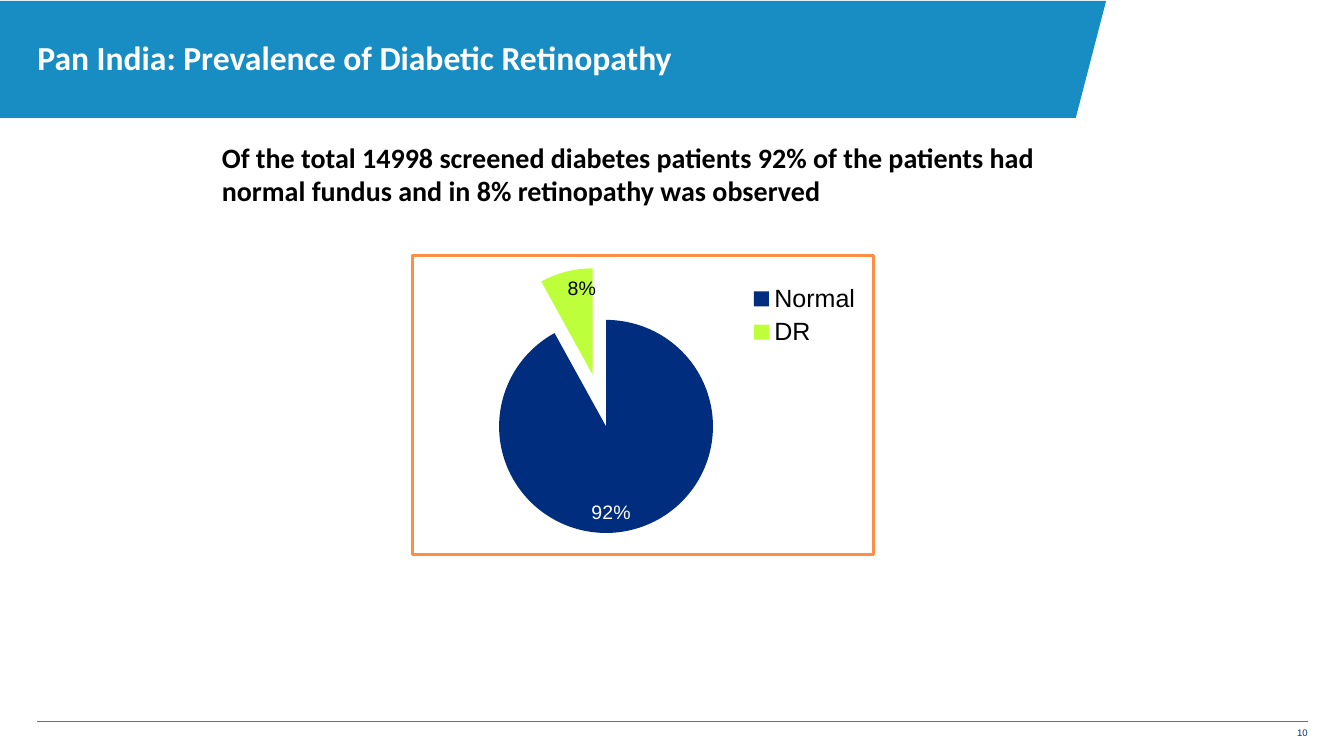
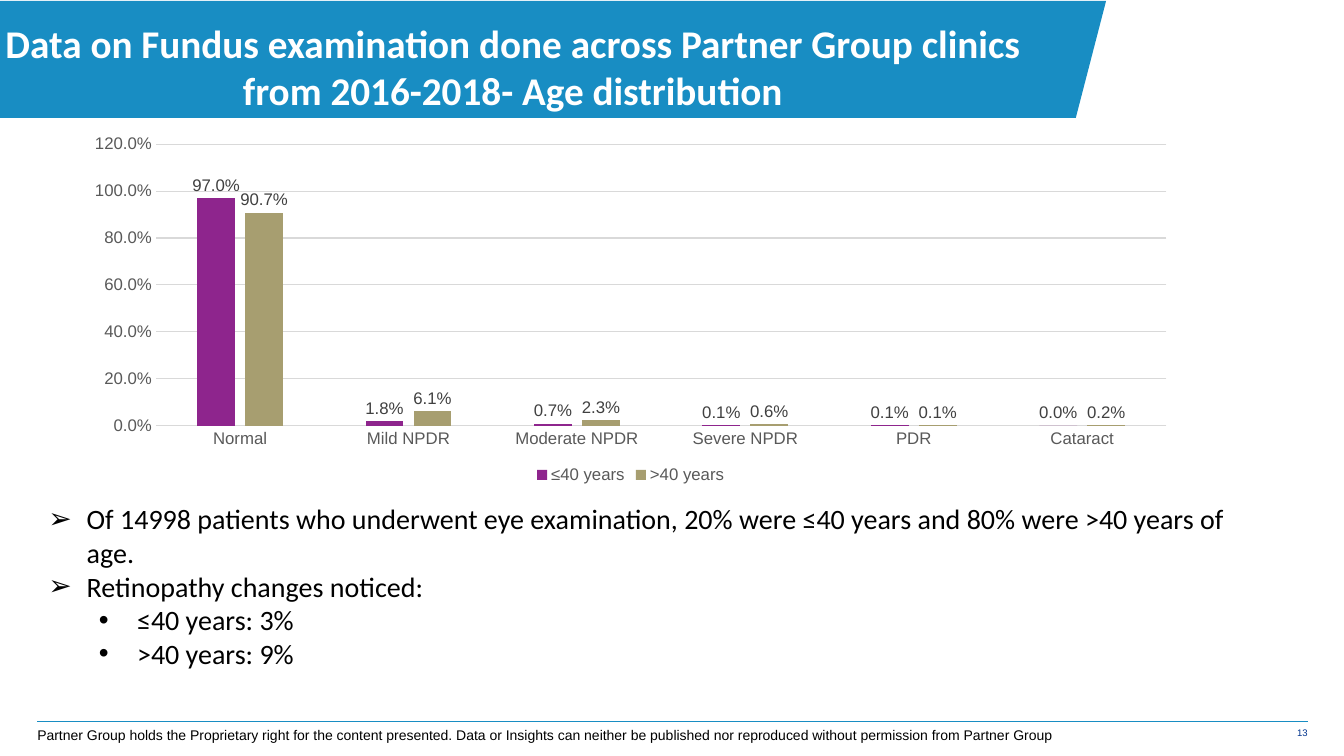
from dataclasses import dataclass
from typing import Optional

from lxml import etree
from pptx import Presentation
from pptx.chart.data import CategoryChartData
from pptx.dml.color import RGBColor
from pptx.enum.chart import XL_CHART_TYPE as CT, XL_LABEL_POSITION as LABEL
from pptx.enum.chart import XL_LEGEND_POSITION as LEGEND, XL_TICK_MARK as TICK
from pptx.enum.text import MSO_ANCHOR as ANCHOR, PP_ALIGN as ALIGN
from pptx.oxml import parse_xml
from pptx.oxml.ns import nsdecls, qn
from pptx.util import Inches, Pt

# Shared style
BLUE = RGBColor(0x18, 0x8D, 0xC3)
NAVY = RGBColor(0x00, 0x2D, 0x7D)
PAGE_BLUE = RGBColor(0x00, 0x33, 0x8D)
LIME = RGBColor(0xBD, 0xFF, 0x3B)
ORANGE = RGBColor(0xFF, 0x8E, 0x45)
PURPLE = RGBColor(0x8E, 0x25, 0x8D)
OLIVE = RGBColor(0xA7, 0x9E, 0x70)
GRID = RGBColor(0xD9, 0xD9, 0xD9)
GREY = RGBColor(0x59, 0x59, 0x59)
DARK = RGBColor(0x40, 0x40, 0x40)
BLACK = RGBColor(0, 0, 0)
WHITE = RGBColor(0xFF, 0xFF, 0xFF)
HEAD, BODY = "Calibri", "Arial"


@dataclass
class Box:
    left: float
    top: float
    width: float
    height: float

    def emu(self) -> tuple:
        return tuple(Inches(v) for v in (self.left, self.top, self.width, self.height))


@dataclass
class Item:
    text: str
    bullet: Optional[str] = None
    level: int = 0


@dataclass
class Series:
    name: str
    values: tuple
    color: RGBColor


# Helpers
def set_font(font, size: float, color: RGBColor, name: str = BODY, bold: bool = False) -> None:
    font.size, font.name, font.bold = Pt(size), name, bold
    font.color.rgb = color


def add_bullet(p, item: Item) -> None:
    pPr = p._p.get_or_add_pPr()
    pPr.set("marL", str(Inches(0.38 + 0.5 * item.level)))
    pPr.set("indent", str(Inches(-0.38)))
    etree.SubElement(pPr, qn("a:buFont")).set("typeface", BODY)
    etree.SubElement(pPr, qn("a:buChar")).set("char", item.bullet)


def add_text(s, box: Box, *items: Item, size: float, color: RGBColor = BLACK,
             font: str = HEAD, bold: bool = False, align=ALIGN.LEFT,
             anchor=ANCHOR.TOP, inset: float = 0, wrap: bool = True) -> None:
    tf = s.shapes.add_textbox(*box.emu()).text_frame
    tf.word_wrap, tf.vertical_anchor = wrap, anchor
    tf.margin_left = tf.margin_top = Inches(inset)
    tf.margin_right = tf.margin_bottom = 0
    for i, item in enumerate(items):
        p = tf.add_paragraph() if i else tf.paragraphs[0]
        p.alignment, p.level = align, item.level
        if item.bullet:
            add_bullet(p, item)
        r = p.add_run()
        r.text = item.text
        set_font(r.font, size, color, font, bold)


def add_frame(prs, page: str):
    """Add a slide with the title band, footer rule and page number."""
    s = prs.slides.add_slide(prs.slide_layouts[6])
    rule = s.shapes.add_connector(1, Inches(0.37), Inches(7.15), Inches(12.97), Inches(7.15))
    rule.line.color.rgb, rule.line.width = BLUE, Pt(0.25)
    etree.SubElement(rule._element.spPr, qn("a:effectLst"))
    add_text(s, Box(12.29, 7.15, 0.68, 0.31), Item(page), size=6.8, color=PAGE_BLUE,
             font=BODY, align=ALIGN.RIGHT, inset=0.06)

    outline = [(Inches(x), Inches(y)) for x, y in
               ((10.97, 0.01), (-0.02, 0.01), (-0.02, 1.17), (10.67, 1.17))]
    builder = s.shapes.build_freeform(*outline[0])
    builder.add_line_segments(outline[1:], close=True)
    band = builder.convert_to_shape()
    band.shadow.inherit = False
    band.fill.solid()
    band.fill.fore_color.rgb = BLUE
    band.line.fill.background()
    return s


def add_title(s, box: Box, text: str, size: float, align=ALIGN.LEFT) -> None:
    add_text(s, box, Item(text), size=size, color=WHITE, bold=True,
             align=align, anchor=ANCHOR.MIDDLE)


def add_chart(s, kind, box: Box, cats: tuple, series: list, fmt: str,
              legend, size: float, color: RGBColor):
    data = CategoryChartData(number_format=fmt)
    data.categories = cats
    for one in series:
        data.add_series(one.name, one.values)
    chart = s.shapes.add_chart(kind, *box.emu(), data).chart
    chart.has_title = False
    set_font(chart.font, size, color)
    chart.has_legend = True
    chart.legend.position = legend
    chart.legend.include_in_layout = False
    set_font(chart.legend.font, size, color)
    return chart


def place(parent, after: Optional[str], box: Box, inner: bool = False) -> None:
    """Fix a chart part at fractions of the chart area."""
    for old in parent.findall(qn("c:layout")):
        parent.remove(old)
    target = '<c:layoutTarget val="inner"/>' if inner else ""
    layout = parse_xml(
        f'<c:layout {nsdecls("c")}><c:manualLayout>{target}'
        '<c:xMode val="edge"/><c:yMode val="edge"/>'
        f'<c:x val="{box.left}"/><c:y val="{box.top}"/>'
        f'<c:w val="{box.width}"/><c:h val="{box.height}"/>'
        '</c:manualLayout></c:layout>')
    if after:
        parent.find(qn(after)).addnext(layout)
    else:
        parent.insert(0, layout)


# Slides
def prevalence_slide(prs) -> None:
    s = add_frame(prs, "10")
    add_title(s, Box(0.37, 0.13, 10.4, 0.87), "Pan India: Prevalence of Diabetic Retinopathy", 24)
    chart = add_chart(s, CT.PIE, Box(4.08, 2.52, 4.6, 3), ("Normal", "DR"),
                      [Series("Series 1", (92, 8), NAVY)], '0"%"', LEGEND.RIGHT, 18, BLACK)
    pie = chart.plots[0]
    pie.vary_by_categories = True
    for i, (fill, ink) in enumerate(((NAVY, WHITE), (LIME, BLACK))):
        point = pie.series[0].points[i]
        point.format.fill.solid()
        point.format.fill.fore_color.rgb = fill
        set_font(point.data_label.font, 14, ink)
        point.data_label.position = LABEL.INSIDE_END
    explosion = parse_xml(f'<c:explosion {nsdecls("c")} val="25"/>')
    pie.series[0]._element.find(qn("c:tx")).addnext(explosion)

    # Chart border and part positions
    root = chart._chartSpace
    root.find(qn("c:chart")).addnext(parse_xml(
        f'<c:spPr {nsdecls("c", "a")}><a:noFill/><a:ln w="{Pt(2.25)}"><a:solidFill>'
        f'<a:srgbClr val="{ORANGE}"/></a:solidFill></a:ln></c:spPr>'))
    place(root.find(".//" + qn("c:plotArea")), None, Box(0.1, 0.04, 0.61, 0.89), inner=True)
    place(chart.legend._element, "c:legendPos", Box(0.72, 0.08, 0.26, 0.24))

    add_text(s, Box(2.2, 1.39, 8.59, 0.67),
             Item("Of the total 14998 screened diabetes patients 92% of the patients had "
                  "normal fundus and in 8% retinopathy was observed"), size=20, bold=True)


def age_slide(prs) -> None:
    s = add_frame(prs, "13")
    add_title(s, Box(0, 0.18, 10.17, 0.95),
              "Data on Fundus examination done across Partner Group clinics "
              "from 2016-2018- Age distribution", 28, ALIGN.CENTER)
    groups = [Series("≤40 years", (0.97, 0.018, 0.007, 0.001, 0.001, 0), PURPLE),
              Series(">40 years", (0.907, 0.061, 0.023, 0.006, 0.001, 0.002), OLIVE)]
    cats = ("Normal", "Mild NPDR", "Moderate NPDR", "Severe NPDR", "PDR", "Cataract")
    chart = add_chart(s, CT.COLUMN_CLUSTERED, Box(0.72, 1.27, 11.07, 3.57), cats, groups,
                      "0.0%", LEGEND.BOTTOM, 12, GREY)
    plot = chart.plots[0]
    plot.vary_by_categories = False
    plot.gap_width, plot.overlap = 219, -27
    for ser, group in zip(plot.series, groups):
        ser.format.fill.solid()
        ser.format.fill.fore_color.rgb = group.color
        labels = ser.data_labels
        labels.show_value, labels.position = True, LABEL.OUTSIDE_END
        labels.number_format, labels.number_format_is_linked = "0.0%", False
        set_font(labels.font, 12, DARK)

    # Axes
    cat_axis, val_axis = chart.category_axis, chart.value_axis
    for axis in (cat_axis, val_axis):
        axis.major_tick_mark = axis.minor_tick_mark = TICK.NONE
        set_font(axis.tick_labels.font, 12, GREY)
    val_axis.minimum_scale, val_axis.maximum_scale, val_axis.major_unit = 0, 1.2, 0.2
    val_axis.tick_labels.number_format = "0.0%"
    val_axis.tick_labels.number_format_is_linked = False
    val_axis.format.line.fill.background()
    for line in (cat_axis.format.line, val_axis.major_gridlines.format.line):
        line.color.rgb, line.width = GRID, Pt(0.75)

    # Findings and rights notice
    add_text(s, Box(0.48, 4.98, 11.77, 1.67),
             Item("Of 14998 patients who underwent eye examination, 20% were ≤40 years "
                  "and 80% were >40 years of age.", "➢"),
             Item("Retinopathy changes noticed:", "➢"),
             Item("≤40 years: 3%", "•", 1),
             Item(">40 years: 9%", "•", 1), size=20)
    add_text(s, Box(0.37, 7.21, 10.1, 0.17),
             Item("Partner Group holds the Proprietary right for the content presented. Data or "
                  "Insights can neither be published nor reproduced without permission from "
                  "Partner Group"), size=10, font=BODY, wrap=False)


def main() -> None:
    prs = Presentation()
    prs.slide_width, prs.slide_height = Inches(13.33), Inches(7.5)
    prevalence_slide(prs)
    age_slide(prs)
    prs.save("out.pptx")


if __name__ == "__main__":
    main()
